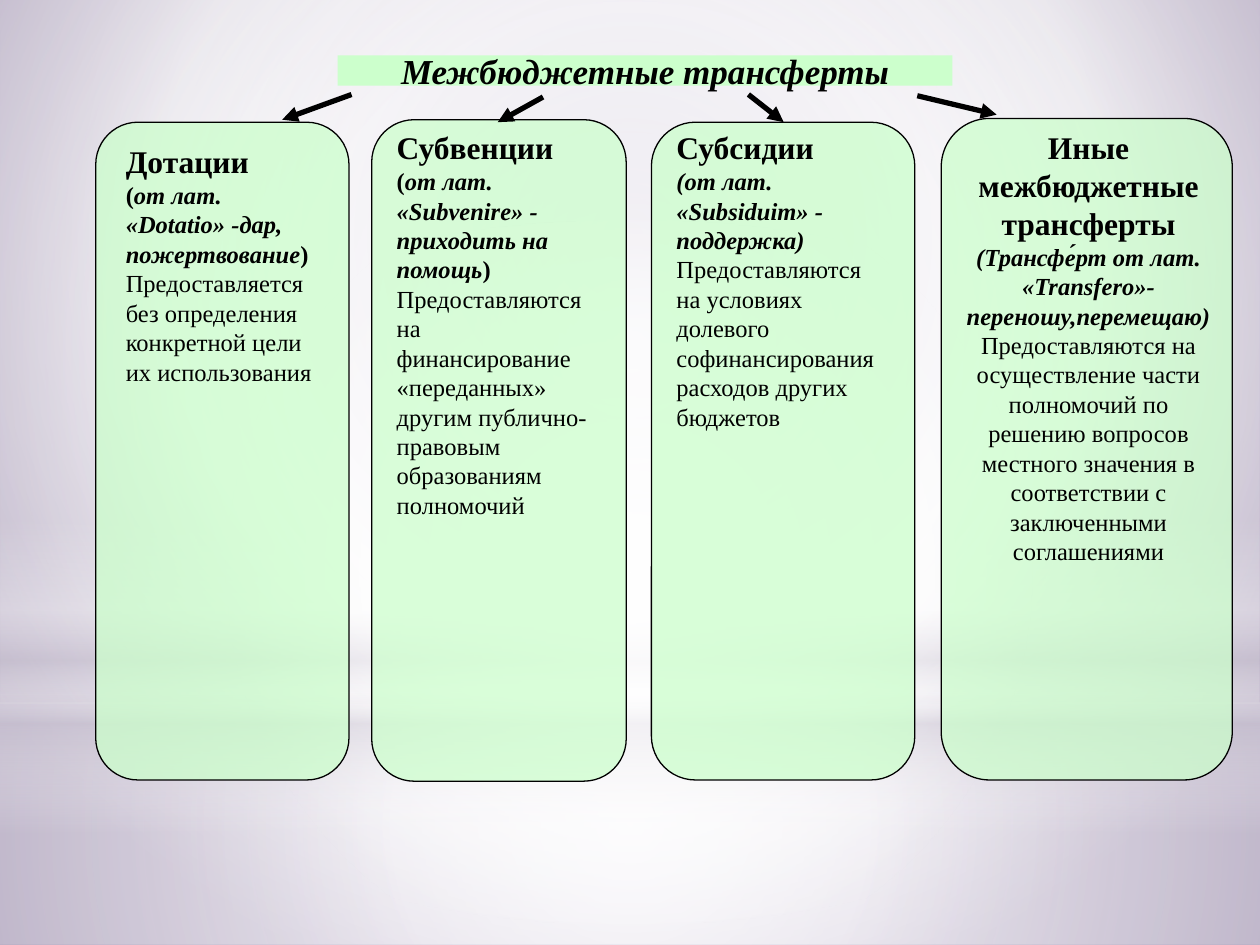
import pptx
import pptx.util
import pptx.dml.color
import pptx.enum.shapes
import pptx.enum.text
import pptx.oxml
import pptx.oxml.ns
from lxml import etree

Inches, Pt = pptx.util.Inches, pptx.util.Pt
RGB = pptx.dml.color.RGBColor.from_string
Shape = pptx.enum.shapes.MSO_SHAPE
Align = pptx.enum.text.PP_ALIGN
qn = pptx.oxml.ns.qn

# Content: box and text place, opacity, arrow (from, to), paragraphs of (style, text)
TITLE = "Межбюджетные трансферты"
CARDS = [
    {"box": (0.76, 0.97, 2.01, 5.22), "text": (0.9, 1.08, 1.73, 2.05), "alpha": 74,
     "arrow": (2.79, 0.75, 2.24, 0.95), "align": Align.LEFT,
     "paras": [
         [("head", "Дотации")],
         [("mark", "("), ("note", "от лат. «Dotatio» -дар, пожертвование"), ("mark", ")")],
         [("body", "Предоставляется без определения конкретной цели их использования")]]},
    {"box": (2.95, 0.95, 2.02, 5.25), "text": (3.05, 0.97, 1.81, 3.23), "alpha": 72,
     "arrow": (4.31, 0.77, 3.95, 0.97), "align": Align.LEFT,
     "paras": [
         [("head", "Субвенции")],
         [("mark", "("), ("note", "от лат. «Subvenire» - приходить на помощь"), ("mark", ")")],
         [("body", "Предоставляются на финансирование «переданных» другим "
                   "публично-правовым образованиям полномочий")]]},
    {"box": (5.17, 0.97, 2.09, 5.22), "text": (5.27, 0.97, 1.89, 2.52), "alpha": 74,
     "arrow": (5.94, 0.75, 6.22, 0.97), "align": Align.LEFT,
     "paras": [
         [("head", "Субсидии")],
         [("note", "(от лат. «Subsiduim» - поддержка)")],
         [("body", "Предоставляются на условиях долевого софинансирования "
                   "расходов других бюджетов")]]},
    {"box": (7.47, 0.94, 2.31, 5.25), "text": (7.56, 0.97, 2.16, 3.6), "alpha": 72,
     "arrow": (7.28, 0.76, 7.91, 0.91), "align": Align.CENTER,
     "paras": [
         [("head", "Иные межбюджетные трансферты"), ("gap", " "),
          ("note", "(Трансфе́рт от лат. «Transfero»-переношу,перемещаю) "),
          ("body", "Предоставляются на осуществление части полномочий по решению "
                   "вопросов местного значения в соответствии с заключенными "
                   "соглашениями")]]},
]

# Theme: styles are (font, size, bold, italic)
SERIF = "Times New Roman"
THEME = {
    "ink": "000000", "mint": "CCFFCC", "edge": 0.75, "arrow": 3,
    "title": (SERIF, 20, True, True),
    "head": (SERIF, 18, True, False),
    "mark": (SERIF, 14, True, False),
    "note": (SERIF, 14, True, True),
    "body": (SERIF, 14, False, False),
    "gap": ("Arial", 9, False, False),
}

# Backdrop: gradient stops are (position, colour, opacity)
WHITE, LILAC = "FFFFFF", "C9C2D1"
MID = (50, 50, 50, 50)
BASE = [(0, "C1B7CD", 100), (60, WHITE, 100), (100, "A191B5", 100)]
LAYERS = [
    (Shape.RECTANGLE, (0, 5.58, 10, 1.92), MID,
     [(0, WHITE, 91), (37, WHITE, 76), (100, LILAC, 79)]),
    (Shape.RECTANGLE, (0, 0, 10, 5.58), MID,
     [(0, WHITE, 89), (48, WHITE, 62), (100, LILAC, 79)]),
    (Shape.RECTANGLE, (0, 4.12, 10, 2.5), None,
     [(0, WHITE, 0), (29, WHITE, 30), (45, LILAC, 40), (55, WHITE, 26),
      (65, LILAC, 60), (100, WHITE, 0)]),
    (Shape.OVAL, (0, 1.75, 10, 5.58), MID, [(0, WHITE, 100), (56, WHITE, 0)]),
]


def add(node, tag, **attrs):
    child = etree.SubElement(node, qn(tag))
    for key, value in attrs.items():
        child.set(key, str(value))
    return child


def blend(solid, stops, focus):
    """Put a gradient where a solid fill stands; no focus means top to bottom."""
    grad = pptx.oxml.parse_xml(
        f'<a:gradFill {pptx.oxml.ns.nsdecls("a")} rotWithShape="1"/>')
    row = add(grad, "a:gsLst")
    for pos, color, alpha in stops:
        tint = add(add(row, "a:gs", pos=pos * 1000), "a:srgbClr", val=color)
        if alpha < 100:
            add(tint, "a:alpha", val=alpha * 1000)
    if focus:
        sides = {side: part * 1000 for side, part in zip("ltrb", focus)}
        add(add(grad, "a:path", path="circle"), "a:fillToRect", **sides)
    else:
        add(grad, "a:lin", ang=90 * 60000, scaled=0)
    solid.getparent().replace(solid, grad)


def style(font, name):
    font.name, size, font.bold, font.italic = THEME[name]
    font.size = Pt(size)
    font.color.rgb = RGB(THEME["ink"])


def shape(slide, kind, box):
    item = slide.shapes.add_shape(kind, *map(Inches, box))
    item.shadow.inherit = False
    item.fill.solid()
    return item


def backdrop(slide):
    slide.background.fill.solid()
    blend(slide.element.xpath(".//p:bgPr/a:solidFill")[0], BASE, (20, 10, 20, 60))
    for kind, box, focus, stops in LAYERS:
        item = shape(slide, kind, box)
        item.line.fill.background()
        blend(item.element.spPr.find(qn("a:solidFill")), stops, focus)


def title(slide):
    item = slide.shapes.title
    slide.shapes.element.append(item.element)  # bring in front of the backdrop
    item.left, item.top, item.width, item.height = map(Inches, (2.68, 0.44, 4.88, 0.24))
    item.fill.solid()
    item.fill.fore_color.rgb = RGB(THEME["mint"])
    frame = item.text_frame
    frame.text = TITLE
    frame.word_wrap = False
    frame.auto_size = pptx.enum.text.MSO_AUTO_SIZE.NONE
    frame.vertical_anchor = pptx.enum.text.MSO_ANCHOR.MIDDLE
    para = frame.paragraphs[0]
    para.alignment = Align.CENTER
    style(para.font, "title")


def panel(slide, card):
    item = shape(slide, Shape.FLOWCHART_ALTERNATE_PROCESS, card["box"])
    item.fill.fore_color.rgb = RGB(THEME["mint"])
    tint = item.element.spPr.find(qn("a:solidFill"))[0]
    add(tint, "a:alpha", val=card["alpha"] * 1000)
    item.line.color.rgb = RGB(THEME["ink"])
    item.line.width = Pt(THEME["edge"])


def label(slide, card):
    frame = slide.shapes.add_textbox(*map(Inches, card["text"])).text_frame
    frame.word_wrap = True
    for i, runs in enumerate(card["paras"]):
        para = frame.add_paragraph() if i else frame.paragraphs[0]
        para.alignment = card["align"]
        if len(runs) == 1:
            style(para.font, runs[0][0])
        for name, text in runs:
            run = para.add_run()
            run.text = text
            if len(runs) > 1:
                style(run.font, name)


def arrow(slide, card):
    line = slide.shapes.add_connector(
        pptx.enum.shapes.MSO_CONNECTOR.STRAIGHT, *map(Inches, card["arrow"]))
    line.line.color.rgb = RGB(THEME["ink"])
    line.line.width = Pt(THEME["arrow"])
    add(line.line._get_or_add_ln(), "a:tailEnd", type="triangle")
    add(line.element.spPr, "a:effectLst")


def main():
    deck = pptx.Presentation()
    deck.slide_width, deck.slide_height = Inches(10), Inches(7.5)
    slide = deck.slides.add_slide(deck.slide_layouts[5])
    backdrop(slide)
    title(slide)
    for part in (panel, label, arrow):
        for card in CARDS:
            part(slide, card)
    deck.save("out.pptx")


if __name__ == "__main__":
    main()
